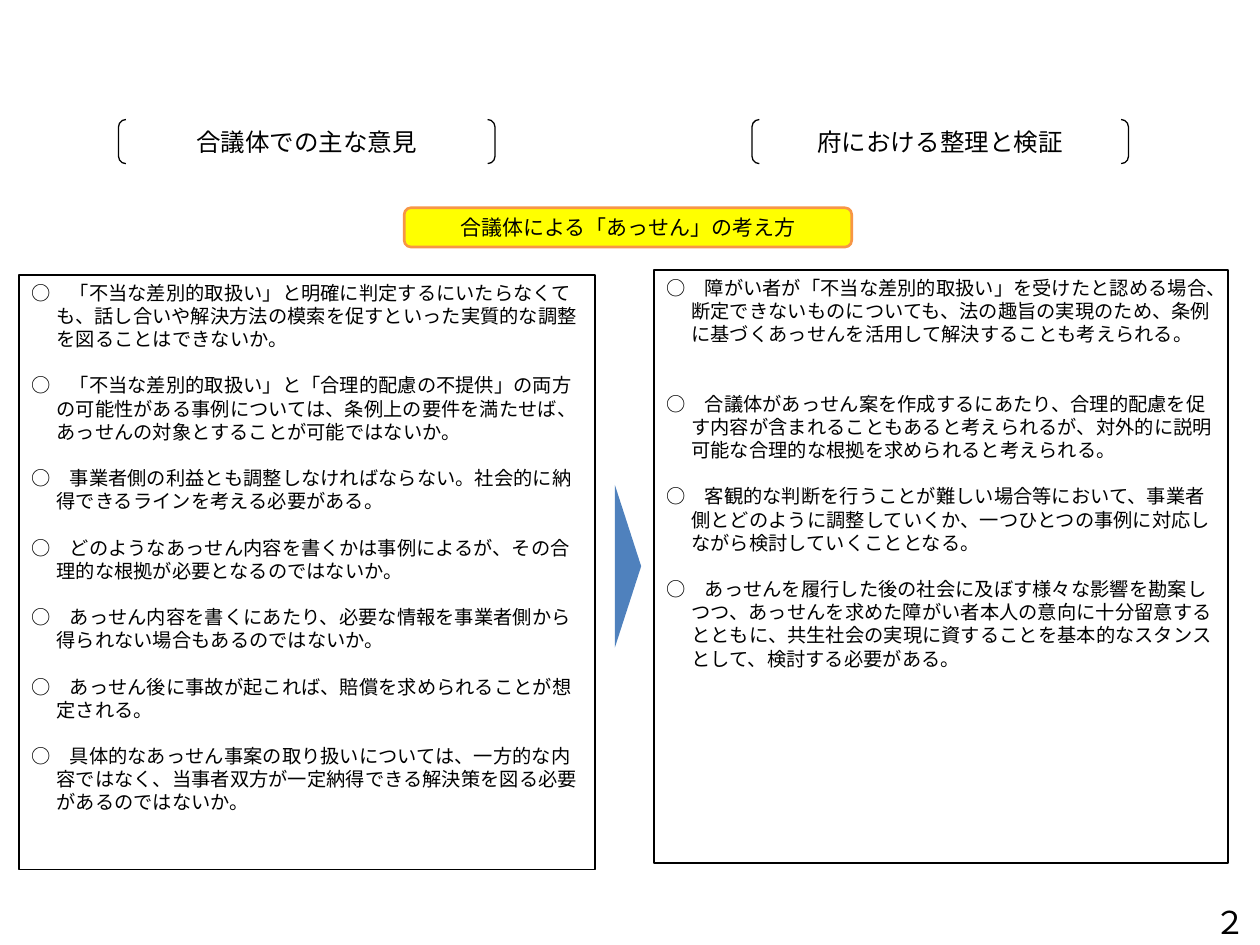
from pptx import Presentation
from pptx.dml.color import RGBColor
from pptx.enum.lang import MSO_LANGUAGE_ID
from pptx.enum.shapes import MSO_SHAPE
from pptx.enum.text import MSO_ANCHOR, PP_ALIGN
from pptx.oxml.ns import qn
from pptx.util import Cm, Pt

LEFT = [
    "「不当な差別的取扱い」と明確に判定するにいたらなくても、話し合いや解決方法の模索を促すといった実質的な調整を図ることはできないか。",
    "「不当な差別的取扱い」と「合理的配慮の不提供」の両方の可能性がある事例については、条例上の要件を満たせば、あっせんの対象とすることが可能ではないか。",
    "事業者側の利益とも調整しなければならない。社会的に納得できるラインを考える必要がある。",
    "どのようなあっせん内容を書くかは事例によるが、その合理的な根拠が必要となるのではないか。",
    "あっせん内容を書くにあたり、必要な情報を事業者側から得られない場合もあるのではないか。",
    "あっせん後に事故が起これば、賠償を求められることが想定される。",
    "具体的なあっせん事案の取り扱いについては、一方的な内容ではなく、当事者双方が一定納得できる解決策を図る必要があるのではないか。",
]
RIGHT = [
    "障がい者が「不当な差別的取扱い」を受けたと認める場合、断定できないものについても、法の趣旨の実現のため、条例に基づくあっせんを活用して解決することも考えられる。",
    "合議体があっせん案を作成するにあたり、合理的配慮を促す内容が含まれることもあると考えられるが、対外的に説明可能な合理的な根拠を求められると考えられる。",
    "客観的な判断を行うことが難しい場合等において、事業者側とどのように調整していくか、一つひとつの事例に対応しながら検討していくこととなる。",
    "あっせんを履行した後の社会に及ぼす様々な影響を勘案しつつ、あっせんを求めた障がい者本人の意向に十分留意するとともに、共生社会の実現に資することを基本的なスタンスとして、検討する必要がある。",
]
HEADS = [(2.39, "合議体での主な意見"), (15.16, "府における整理と検証")]
LISTS = [((13.18, 5.44, 11.58, 11.96), RIGHT, 2), ((0.38, 5.54, 11.61, 11.99), LEFT, 1)]
TOPIC = "合議体による「あっせん」の考え方"

THEME = {
    "ink": "000000", "paper": "FFFFFF", "mark": "FFFF00", "edge": "F79646", "arrow": "4F81BD",
    "font": "Noto Sans CJK JP", "digit": "Calibri",
    "body": 11, "topic": 12, "head": 14, "page": 18, "pitch": 13.25,
}


def assign(item, values):
    """Set each named value on an object."""
    for name, value in values.items():
        setattr(item, name, value)


def block(slide, kind, place, fill=None, line=None, width=1):
    """Add a flat shape with the given fill and line colours."""
    shape = slide.shapes.add_shape(kind, *map(Cm, place))
    shape.shadow.inherit = False
    if fill:
        shape.fill.solid()
        shape.fill.fore_color.rgb = RGBColor.from_string(THEME[fill])
    else:
        shape.fill.background()
    if line:
        shape.line.color.rgb = RGBColor.from_string(THEME[line])
        shape.line.width = Pt(width)
    else:
        shape.line.fill.background()
    return shape


def write(para, text, size, face="font"):
    """Add one run in a theme face and size."""
    run = para.add_run()
    run.text = text
    run.font.color.rgb = RGBColor.from_string(THEME["ink"])
    assign(run.font, {"size": Pt(THEME[size]), "name": THEME[face],
                      "language_id": MSO_LANGUAGE_ID.JAPANESE})
    east = run.font._element.makeelement(qn("a:ea"), {"typeface": THEME["font"]})
    run.font._element.find(qn("a:latin")).addnext(east)


def label(shape, text, size, face="font"):
    """Centre a single line in a shape."""
    assign(shape.text_frame, {"word_wrap": True, "vertical_anchor": MSO_ANCHOR.MIDDLE})
    para = shape.text_frame.paragraphs[0]
    para.alignment = PP_ALIGN.CENTER
    write(para, text, size, face)


def points(shape, items, first):
    """Write circled points with hanging indents and whole-line gaps."""
    frame = shape.text_frame
    assign(frame, {"word_wrap": True, "vertical_anchor": MSO_ANCHOR.TOP})
    for rank, text in enumerate(items):
        para = frame.add_paragraph() if rank else frame.paragraphs[0]
        gap = (0, first, 1)[min(rank, 2)]
        assign(para, {"alignment": PP_ALIGN.LEFT, "line_spacing": Pt(THEME["pitch"]),
                      "space_before": Pt(THEME["pitch"] * gap)})
        props = para._p.get_or_add_pPr()
        props.set("marL", str(Cm(0.51)))
        props.set("indent", str(-Cm(0.51)))
        write(para, "○\u3000".replace("\u3000", "　") + text, "body")


def main():
    """Build and save the slide."""
    deck = Presentation()
    assign(deck, {"slide_width": Cm(25.4), "slide_height": Cm(19.05)})
    slide = deck.slides.add_slide(deck.slide_layouts[6])
    for place, items, first in LISTS:
        points(block(slide, MSO_SHAPE.RECTANGLE, place, "paper", "ink"), items, first)
    topic = block(slide, MSO_SHAPE.ROUNDED_RECTANGLE, (8.15, 4.19, 9.02, 0.79), "mark", "edge", 1.5)
    label(topic, TOPIC, "topic")
    for left, text in HEADS:
        head = block(slide, MSO_SHAPE.DOUBLE_BRACKET, (left, 2.41, 7.59, 0.89), None, "ink", 0.75)
        label(head, text, "head")
    arrow = block(slide, MSO_SHAPE.ISOSCELES_TRIANGLE, (11.02, 11.15, 3.28, 0.53), "arrow")
    arrow.rotation = 90
    page = block(slide, MSO_SHAPE.RECTANGLE, (24.21, 18.06, 1.19, 1.07), "paper")
    label(page, "２", "page", "digit")
    deck.save("out.pptx")


if __name__ == "__main__":
    main()
